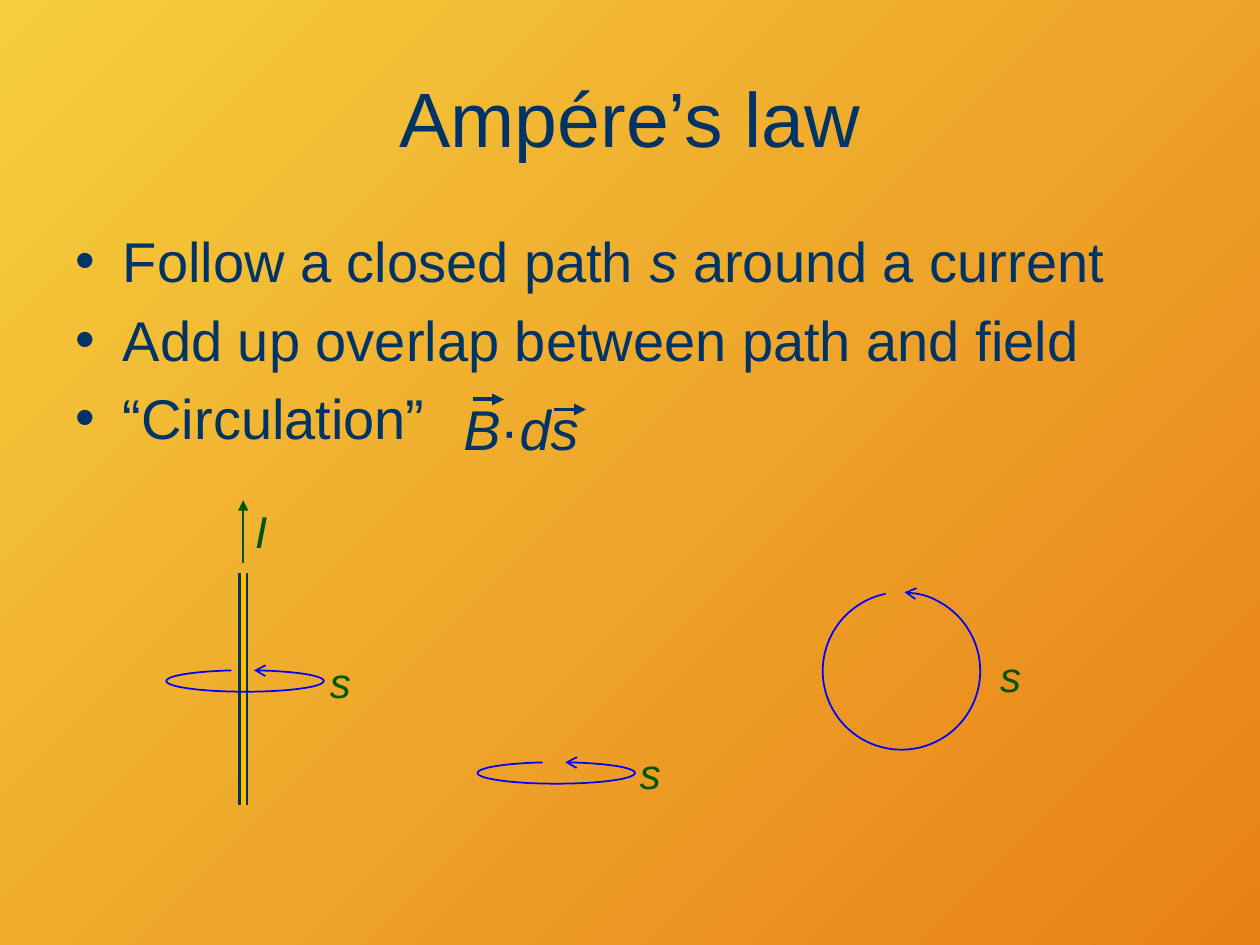
import pptx
import pptx.dml.color
import pptx.enum.shapes
import pptx.enum.text
import pptx.oxml
import pptx.oxml.ns
import pptx.util

Inches = pptx.util.Inches
Pt = pptx.util.Pt
Fit = pptx.enum.text.MSO_AUTO_SIZE

NAVY, GREEN, BLUE, GOLD = "003366", "005500", "0000FF", "FFC000"


def color(code):
    return pptx.dml.color.RGBColor.from_string(code)


class Deck:
    """Holds the text style and the current slide."""

    font = "Arial"

    def __init__(self, slide):
        self.slide = slide
        self.shapes = slide.shapes

    def back(self, first, last):
        """Fill the background with a diagonal gradient."""
        fill = self.slide.background.fill
        fill.gradient()
        fill.gradient_angle = 315
        for stop, code in zip(fill.gradient_stops, (first, last)):
            stop.color.rgb = color(code)

    def fill(self, para, runs, size, code, font=None):
        """Add (text, italic) runs to a paragraph."""
        for text, slant in runs:
            run = para.add_run()
            run.text = text
            run.font.name = font or self.font
            run.font.size = Pt(size)
            run.font.italic = slant
            run.font.color.rgb = color(code)

    def holder(self, index, box, lines, size):
        """Place and fill a template placeholder."""
        shape = self.slide.placeholders[index]
        shape.left, shape.top, shape.width, shape.height = map(Inches, box)
        frame = shape.text_frame
        frame.auto_size = Fit.NONE
        for i, runs in enumerate(lines):
            para = frame.add_paragraph() if i else frame.paragraphs[0]
            self.fill(para, runs, size, NAVY)

    def text(self, box, runs, size, code, wrap=False, font=None):
        frame = self.shapes.add_textbox(*map(Inches, box)).text_frame
        frame.word_wrap = wrap
        frame.auto_size = Fit.NONE if wrap else Fit.SHAPE_TO_FIT_TEXT
        para = frame.paragraphs[0]
        self.fill(para, runs, size, code, font)
        return para

    def tip(self, shape, end, kind):
        """Put an arrowhead on a line; end is head or tail."""
        shape._element.spPr.ln.append(pptx.oxml.parse_xml(
            f'<a:{end}End {pptx.oxml.ns.nsdecls("a")} type="{kind}"/>'))

    def line(self, start, stop, code, width, arrow=False):
        straight = pptx.enum.shapes.MSO_CONNECTOR.STRAIGHT
        wire = self.shapes.add_connector(
            straight, *map(Inches, (*start, *stop)))
        wire.line.color.rgb = color(code)
        wire.line.width = Pt(width)
        if arrow:
            self.tip(wire, "tail", "triangle")
        wire._element.spPr.append(pptx.oxml.parse_xml(
            f'<a:effectLst {pptx.oxml.ns.nsdecls("a")}/>'))

    def loop(self, box, angles):
        """Draw an open path with an arrowhead where the arc starts."""
        kind = pptx.enum.shapes.MSO_SHAPE.ARC
        arc = self.shapes.add_shape(kind, *map(Inches, box))
        arc.shadow.inherit = False
        arc.fill.background()
        arc.line.color.rgb = color(BLUE)
        arc.line.width = Pt(1)
        for i, angle in enumerate(angles):
            arc.adjustments[i] = angle * 0.6  # from degrees
        self.tip(arc, "head", "arrow")


def main():
    show = pptx.Presentation()
    show.slide_width, show.slide_height = Inches(10), Inches(7.5)
    deck = Deck(show.slides.add_slide(show.slide_layouts[1]))
    deck.back("F5CE3D", "E88018")

    deck.holder(0, (0.5, 0.3, 9, 1.25), [[("Ampére’s law", False)]], 44)
    deck.holder(1, (0.5, 1.75, 9, 2.18), [
        [("Follow a closed path ", False), ("s", True),
         (" around a current", False)],
        [("Add up overlap between path and field", False)],
        [("“Circulation”", False)],
    ], 32)

    # Product of field and path, with vector arrows
    dot = deck.text((3.58, 3.08, 1.58, 0.83),
                    [("B", True), ("·", False), ("ds", True)],
                    32, NAVY, wrap=True)
    dot.space_before = Pt(6.4)
    for x, y in ((3.75, 3.17), (4.4, 3.25)):
        deck.line((x, y), (x + 0.25, y), NAVY, 2.25, arrow=True)

    # Wire with its current
    wire = 1.93
    for code, width in ((NAVY, 6), (GOLD, 3)):
        deck.line((wire, 4.55), (wire, 6.39), code, width)
    deck.line((wire, 4.47), (wire, 3.97), GREEN, 1.5, arrow=True)
    deck.text((wire, 3.97, 0.34, 0.51), [("I", True)], 24, GREEN,
              font="DejaVu Sans")

    # Closed paths: two seen from the side, one from above
    side, above = (310.16, 217.64), (272.18, 258.33)
    for left, top, high, angles, label in (
            (1.32, 5.32, 0.17, side, (2.52, 5.16)),
            (3.79, 6.05, 0.17, side, (4.98, 5.88)),
            (6.53, 4.7, 1.25, above, (7.84, 5.11))):
        deck.text((*label, 0.37, 0.51), [("s", True)], 24, GREEN)
        deck.loop((left, top, 1.25, high), angles)

    show.save("out.pptx")


if __name__ == "__main__":
    main()
